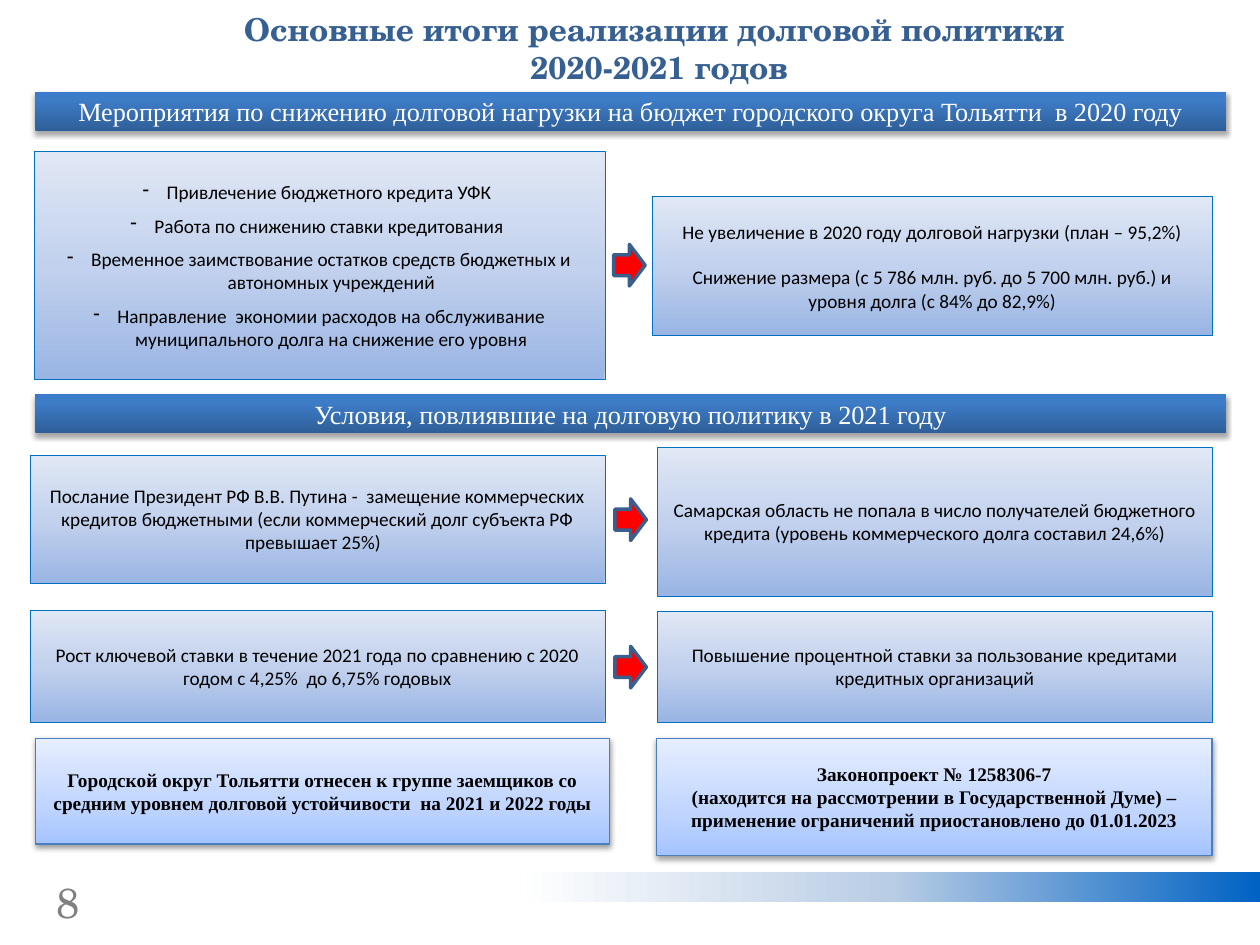
"""Build the slide on debt policy results for 2020-2021."""
from lxml import etree
from pptx import Presentation
from pptx.dml.color import RGBColor
from pptx.enum import shapes, text
from pptx.oxml import ns
from pptx.util import Inches, Pt

BLACK = RGBColor(0, 0, 0)
WHITE = RGBColor(255, 255, 255)
GREY = RGBColor(0x80, 0x80, 0x80)
NAVY = RGBColor(0x37, 0x60, 0x92)
RED = RGBColor(255, 0, 0)
ARROW_LINE = RGBColor(0x3A, 0x5F, 0x8C)
BOX_LINE = RGBColor(0, 0x70, 0xC0)
NOTE_LINE = RGBColor(0x4B, 0x7E, 0xBC)


def stops(*pairs):
    return [(pos, RGBColor.from_string(c)) for pos, c in pairs]


BOX_FILL = stops((0, "9AB5E4"), (50, "C2D1ED"), (100, "E1E8F5"))
NOTE_FILL = stops((0, "A4C4FF"), (35, "BFD4FF"), (100, "E6EEFF"))
BANNER_FILL = stops((0, "2F5F99"), (80, "3D7CC7"), (100, "3A7CCB"))
STRIP_FILL = stops((0, "0062C4"), (50, "B9CDE5"), (100, "FFFFFF"))

SERIF, HEAD, SANS = "Times New Roman", "TeX Gyre Schola", "Calibri"
KIND = shapes.MSO_SHAPE
ALIGN = text.PP_ALIGN

TITLE = ["Основные итоги реализации долговой политики ", "2020-2021 годов"]
BANNERS = [
    (0.73, "Мероприятия по снижению долговой нагрузки на бюджет городского округа Тольятти  в 2020 году"),
    (3.13, "Условия, повлиявшие на долговую политику в 2021 году"),
]
MEASURES = [
    "Привлечение бюджетного кредита УФК ",
    "Работа по снижению ставки кредитования ",
    "Временное заимствование остатков средств бюджетных и автономных учреждений",
    "Направление  экономии расходов на обслуживание муниципального долга на снижение его уровня",
]
RESULTS = [
    "Не увеличение в 2020 году долговой нагрузки (план – 95,2%)",
    "Снижение размера (с 5 786 млн. руб. до 5 700 млн. руб.) и уровня долга (с 84% до 82,9%)",
]
BOXES = [
    ((0.27, 1.2, 4.53, 1.81), MEASURES, dict(after=6, bullet="-")),
    ((5.18, 1.56, 4.44, 1.1), RESULTS, dict(after=13)),
    ((0.24, 3.61, 4.56, 1.02),
     ["Послание Президент РФ В.В. Путина -  замещение коммерческих кредитов бюджетными "
      "(если коммерческий долг субъекта РФ превышает 25%)  "], {}),
    ((5.22, 3.55, 4.4, 1.18),
     ["Самарская область не попала в число получателей бюджетного кредита "
      "(уровень коммерческого долга составил 24,6%)"], {}),
    ((0.24, 4.84, 4.56, 0.89),
     ["Рост ключевой ставки в течение 2021 года по сравнению с 2020 годом "
      "с 4,25%  до 6,75% годовых"], {}),
    ((5.22, 4.85, 4.4, 0.88),
     ["Повышение процентной ставки за пользование кредитами кредитных организаций"], {}),
]
NOTES = [
    ((0.28, 5.86, 4.56, 0.84),
     ["Городской округ Тольятти отнесен к группе заемщиков со средним уровнем "
      "долговой устойчивости  на 2021 и 2022 годы"]),
    ((5.21, 5.86, 4.41, 0.93),
     ["Законопроект № 1258306-7",
      "(находится на рассмотрении в Государственной Думе) – "
      "применение ограничений приостановлено до 01.01.2023"]),
]
ARROWS = [(4.87, 1.94), (4.88, 3.96), (4.88, 5.13)]


def add_text(s, lines, size=11, font=SANS, color=BLACK, bold=False,
             align=ALIGN.CENTER, after=0, bullet=None):
    tf = s.text_frame
    tf.word_wrap = True
    tf.vertical_anchor = text.MSO_ANCHOR.MIDDLE
    for i, line in enumerate(lines):
        p = tf.add_paragraph() if i else tf.paragraphs[0]
        p.alignment = align
        if after and (bullet or i < len(lines) - 1):
            p.space_after = Pt(after)
        if bullet:
            pr = p._p.get_or_add_pPr()
            pr.set("marL", str(Inches(0.19)))
            pr.set("indent", str(-Inches(0.19)))
            etree.SubElement(pr, ns.qn("a:buChar"), char=bullet)
        r = p.add_run()
        r.text = line
        r.font.size, r.font.name, r.font.bold = Pt(size), font, bold
        r.font.color.rgb = color


def set_gradient(s, colors, angle):
    s.fill.gradient()
    s.fill.gradient_angle = angle
    gs_list = s._element.spPr.find(".//" + ns.qn("a:gsLst"))
    for gs in list(gs_list):
        gs_list.remove(gs)
    for pos, color in colors:
        gs = etree.SubElement(gs_list, ns.qn("a:gs"), pos=str(pos * 1000))
        etree.SubElement(gs, ns.qn("a:srgbClr"), val=str(color))


def set_shadow(s, dist, alpha):
    effects = s._element.spPr.find(ns.qn("a:effectLst"))
    shadow = etree.SubElement(effects, ns.qn("a:outerShdw"), blurRad=str(Pt(3.1)),
                              dist=str(Pt(dist)), dir="5400000", rotWithShape="0")
    color = etree.SubElement(shadow, ns.qn("a:srgbClr"), val="000000")
    etree.SubElement(color, ns.qn("a:alpha"), val=str(alpha * 1000))


def add_shape(slide, kind, at, fill, line=None, width=0, angle=90):
    s = slide.shapes.add_shape(kind, *map(Inches, at))
    s.shadow.inherit = False
    if isinstance(fill, RGBColor):
        s.fill.solid()
        s.fill.fore_color.rgb = fill
    else:
        set_gradient(s, fill, angle)
    if line is None:
        s.line.fill.background()
    else:
        s.line.color.rgb = line
        s.line.width = Pt(width)
    return s


def main():
    prs = Presentation()
    prs.slide_width, prs.slide_height = Inches(10), Inches(7.5)
    slide = prs.slides.add_slide(prs.slide_layouts[6])

    number = slide.shapes.add_textbox(*map(Inches, (0.18, 6.91, 0.55, 0.5)))
    add_text(number, ["8"], size=24, font=HEAD, color=GREY, align=ALIGN.RIGHT)
    title = slide.shapes.add_textbox(*map(Inches, (0.73, 0, 9, 0.76)))
    add_text(title, TITLE, size=18, font=HEAD, color=NAVY, bold=True)
    add_shape(slide, KIND.RECTANGLE, (4.13, 6.92, 5.87, 0.24), STRIP_FILL, angle=180)

    for top, caption in BANNERS:
        s = add_shape(slide, KIND.ROUNDED_RECTANGLE, (0.28, top, 9.45, 0.31), BANNER_FILL)
        s.adjustments[0] = 0
        set_shadow(s, 1.8, 35)
        add_text(s, [caption], size=15, font=SERIF, color=WHITE)
    for at, lines, style in BOXES:
        s = add_shape(slide, KIND.ACTION_BUTTON_CUSTOM, at, BOX_FILL, BOX_LINE, 0.25)
        add_text(s, lines, **style)
    for at, lines in NOTES:
        s = add_shape(slide, KIND.RECTANGLE, at, NOTE_FILL, NOTE_LINE, 0.75)
        set_shadow(s, 1.6, 38)
        add_text(s, lines, font=SERIF, bold=True)
    for left, top in ARROWS:
        add_shape(slide, KIND.RIGHT_ARROW, (left, top, 0.25, 0.33), RED, ARROW_LINE, 2)

    prs.save("out.pptx")


if __name__ == "__main__":
    main()
